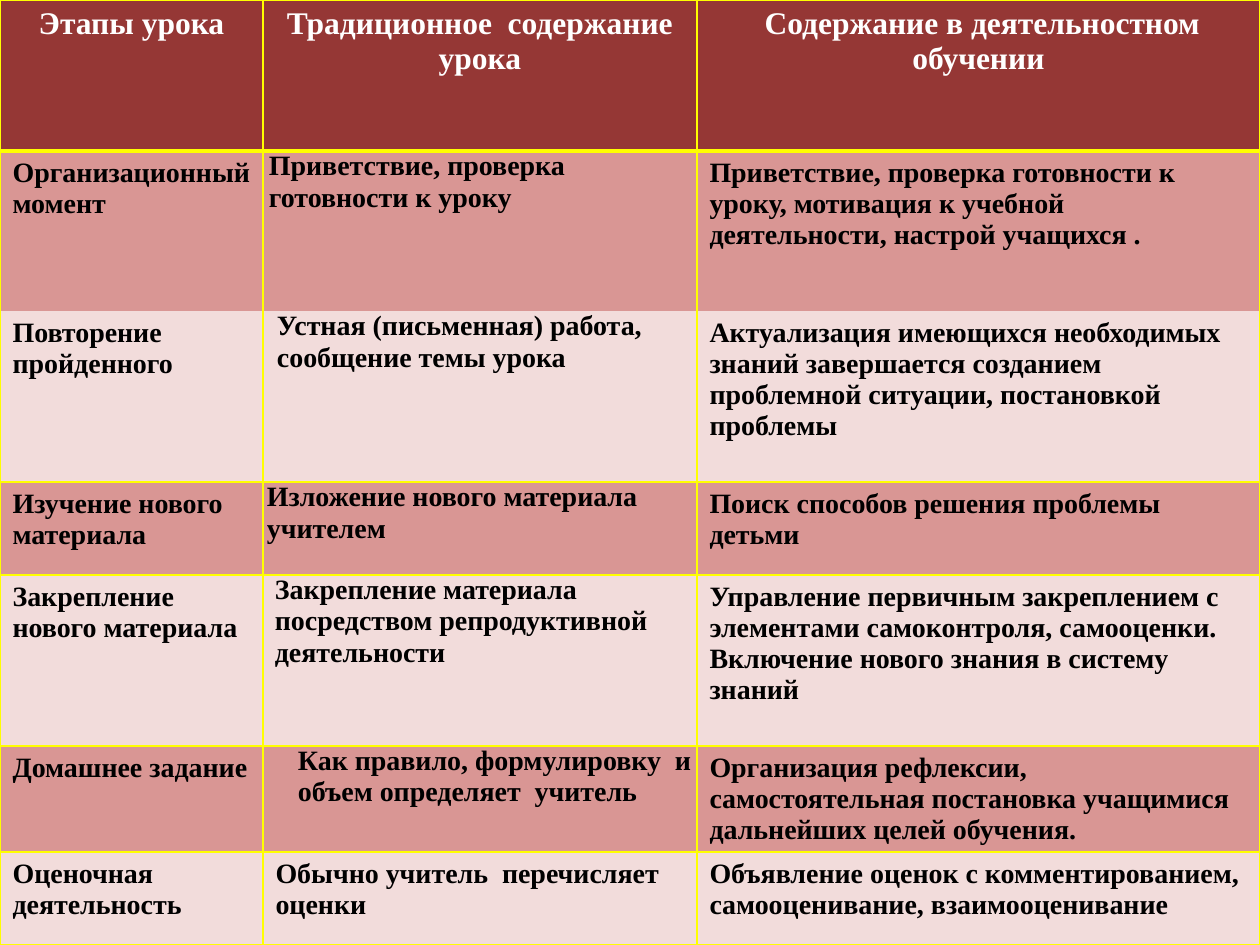
"""Build a slide with a table comparing lesson stages in two teaching approaches."""
from itertools import accumulate

from lxml.etree import SubElement
from pptx import Presentation
from pptx.dml.color import RGBColor
from pptx.enum.text import PP_ALIGN
from pptx.oxml import parse_xml
from pptx.oxml.ns import nsdecls, qn
from pptx.util import Emu, Pt

HEADER = ("Этапы урока", "Традиционное  содержание урока", " Содержание в деятельностном обучении")
STAGES = [
    ("Организационный момент", "Приветствие, проверка готовности к уроку",
     "Приветствие, проверка готовности к уроку, мотивация к учебной деятельности, настрой учащихся ."),
    ("Повторение пройденного", "Устная (письменная) работа, сообщение темы урока",
     "Актуализация имеющихся необходимых знаний завершается созданием проблемной ситуации, "
     "постановкой проблемы"),
    ("Изучение нового материала", "Изложение нового материала учителем",
     "Поиск способов решения проблемы детьми"),
    ("Закрепление нового материала", "Закрепление материала посредством репродуктивной деятельности",
     "Управление первичным закреплением с элементами самоконтроля, самооценки. "
     "Включение нового знания в систему знаний"),
    ("Домашнее задание", "Как правило, формулировку  и объем определяет  учитель",
     "Организация рефлексии, самостоятельная постановка учащимися дальнейших целей обучения."),
    ("Оценочная деятельность", "Обычно учитель  перечисляет оценки",
     "Объявление оценок с комментированием, самооценивание, взаимооценивание"),
]
COLUMN_WIDTHS = (263, 434, 563)
ROW_HEIGHTS = (151, 160, 171, 93, 171, 106, 93)
TIGHT_INDENTS = {1: 2, 2: 10, 3: 0, 4: 8, 5: 31}
RULE_WIDTHS = (1, 3, 0, 1, 1, 1, 1, 1)
TIGHT_MARGINS = {"margin_left": 4, "margin_right": 4, "margin_top": 0, "margin_bottom": 0}
THEME = {
    "header": {"fill": "953735", "color": "FFFFFF", "size": 18, "align": PP_ALIGN.CENTER},
    "bands": [
        {"fill": "D99694", "color": "000000", "size": 16, "align": PP_ALIGN.LEFT},
        {"fill": "F2DCDB", "color": "000000", "size": 16, "align": PP_ALIGN.LEFT},
    ],
    "font": "Times New Roman",
    "rule": "FFFF00",
    "background": [(15, "F2F200", 69), (65, "F0EBD5", 100), (100, "D1C39F", 100)],
}


def px(length):
    return Emu(round(length * 914400 / 126))


def set_background(slide):
    stops = "".join(
        f'<a:gs pos="{place * 1000}"><a:srgbClr val="{color}"><a:alpha val="{alpha * 1000}"/></a:srgbClr></a:gs>'
        for place, color, alpha in THEME["background"])
    background = parse_xml(
        f'<p:bg {nsdecls("p", "a")}><p:bgPr><a:gradFill><a:gsLst>{stops}</a:gsLst>'
        '<a:lin ang="5400000" scaled="0"/></a:gradFill><a:effectLst/></p:bgPr></p:bg>')
    slide.element.cSld.insert(0, background)


def set_borders(cell, widths):
    properties = cell._tc.get_or_add_tcPr()
    for position, (side, width) in enumerate(widths.items()):
        line = SubElement(properties, qn(f"a:{side}"), w=str(Pt(width)))
        if width:
            fill = SubElement(line, qn("a:solidFill"))
            SubElement(fill, qn("a:srgbClr"), val=THEME["rule"])
        else:
            SubElement(line, qn("a:noFill"))
        properties.insert(position, line)


def fill_cell(cell, text, style):
    cell.fill.solid()
    cell.fill.fore_color.rgb = RGBColor.from_string(style["fill"])
    para = cell.text_frame.paragraphs[0]
    para.alignment = style["align"]
    span = para.add_run()
    span.text = text
    font_format = {"name": THEME["font"], "size": Pt(style["size"]), "bold": True}
    for name, value in font_format.items():
        setattr(span.font, name, value)
    span.font.color.rgb = RGBColor.from_string(style["color"])


def tighten(cell, indent):
    for name, value in TIGHT_MARGINS.items():
        setattr(cell, name, px(value))
    properties = cell.text_frame.paragraphs[0]._p.get_or_add_pPr()
    properties.set("marL", str(px(indent)))
    properties.set("indent", "0")


def add_stage_table(slide):
    rows = [HEADER, *STAGES]
    width, height = list(accumulate(COLUMN_WIDTHS))[-1], sum(ROW_HEIGHTS)
    table = slide.shapes.add_table(len(rows), len(HEADER), 0, 0, px(width), px(height)).table
    table.horz_banding = False
    for column, length in zip(table.columns, COLUMN_WIDTHS):
        column.width = px(length)
    for r, (row, length) in enumerate(zip(rows, ROW_HEIGHTS)):
        table.rows[r].height = px(length)
        style = THEME["bands"][(r - 1) % 2] if r else THEME["header"]
        borders = {"lnL": 1, "lnR": 1, "lnT": RULE_WIDTHS[r], "lnB": RULE_WIDTHS[r + 1]}
        for c, text in enumerate(row):
            cell = table.cell(r, c)
            fill_cell(cell, text, style)
            set_borders(cell, borders)
            if c == 1 and r in TIGHT_INDENTS:
                tighten(cell, TIGHT_INDENTS[r])


def main():
    deck = Presentation()
    deck.slide_width, deck.slide_height = px(1260), px(945)
    page = deck.slides.add_slide(deck.slide_layouts[6])
    set_background(page)
    add_stage_table(page)
    deck.save("out.pptx")


if __name__ == "__main__":
    main()
